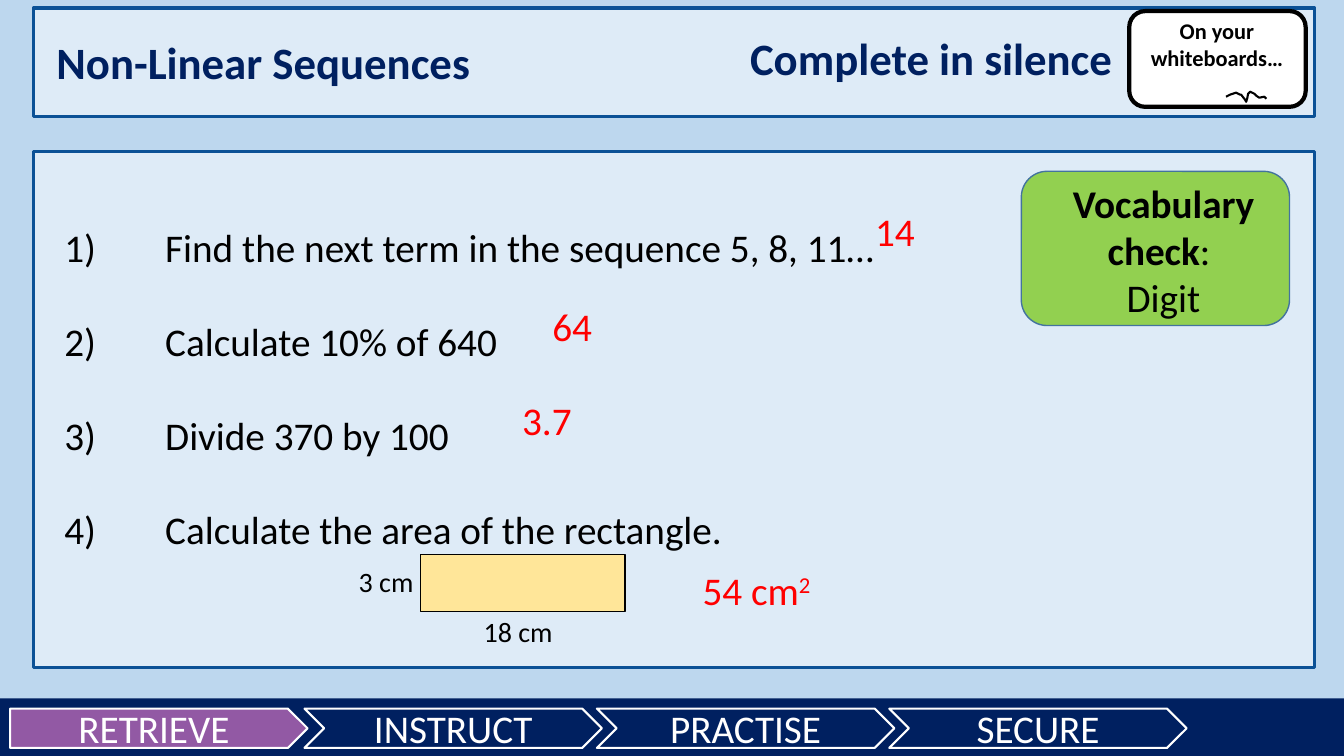
from pptx import Presentation
from pptx import util as u
from pptx.dml.color import RGBColor
from pptx.enum import shapes, text
from pptx.oxml import parse_xml
from pptx.oxml.ns import nsdecls

SKY = RGBColor(0xBD, 0xD7, 0xEE)
PALE = RGBColor(0xDE, 0xEB, 0xF7)
BLUE = RGBColor(0x0B, 0x51, 0x96)
NAVY = RGBColor(0x00, 0x20, 0x60)
PURPLE = RGBColor(0x92, 0x59, 0xA4)
GREEN = RGBColor(0x92, 0xD0, 0x50)
STEEL = RGBColor(0x43, 0x73, 0x9E)
YELLOW = RGBColor(0xFF, 0xE6, 0x99)
RED = RGBColor(0xFF, 0x00, 0x00)
BLACK = RGBColor(0x00, 0x00, 0x00)
WHITE = RGBColor(0xFF, 0xFF, 0xFF)

FONT = "Calibri"
LEFT, CENTER = text.PP_ALIGN.LEFT, text.PP_ALIGN.CENTER
KINDS = shapes.MSO_SHAPE

TITLE = "Non-Linear Sequences"
INSTRUCTION = "Complete in silence"
QUESTIONS = [
    "Find the next term in the sequence 5, 8, 11…",
    "Calculate 10% of 640",
    "Divide 370 by 100",
    "Calculate the area of the rectangle.",
]
# Each paragraph is a list of runs: (words, bold)
VOCABULARY = [[("Vocabulary check", True), (": ", False)], [("Digit", False)]]
STAGES = ["RETRIEVE", "INSTRUCT", "PRACTISE", "SECURE"]
STAGE_LEFT = [0.1, 3.02, 5.92, 8.82]
PANELS = [(0.33, 0.08, 12.71, 1.08), (0.33, 1.5, 12.71, 5.12)]
ANSWERS = [
    ("14", (8.58, 2.01, 0.88, 0.57)),
    ("64", (5.38, 2.95, 0.82, 0.57)),
    ("3.7", (5.08, 3.88, 0.91, 0.57)),
    ("54 cm", (6.87, 5.57, 2.59, 0.57)),
]
SIDE_LABELS = [
    ("3 cm", (3.46, 5.55, 0.83, 0.44), LEFT),
    ("18 cm", (4.62, 6.05, 1.04, 0.44), CENTER),
]
SCRIBBLE = [
    (12.16, 0.96), (12.2, 0.94), (12.23, 0.93), (12.26, 0.92), (12.3, 0.94),
    (12.31, 0.94), (12.35, 0.99), (12.36, 1.01), (12.37, 0.98), (12.38, 0.93),
    (12.4, 0.91), (12.44, 0.93), (12.46, 0.95), (12.49, 0.97), (12.54, 0.96),
    (12.56, 0.98),
]


def inches(values):
    return [u.Inches(value) for value in values]


def paint(shape, fill, line, width):
    shape.shadow.inherit = False
    if fill is None:
        shape.fill.background()
    else:
        shape.fill.solid()
        shape.fill.fore_color.rgb = fill
    if line is None:
        shape.line.fill.background()
    else:
        shape.line.color.rgb = line
        shape.line.width = u.Pt(width)


def add_box(parent, kind, place, fill, line=None, width=1):
    shape = parent.add_shape(kind, *inches(place))
    paint(shape, fill, line, width)
    return shape


def add_run(paragraph, words, size, color, bold=False):
    run = paragraph.add_run()
    run.text = words
    run.font.name = FONT
    run.font.size = u.Pt(size)
    run.font.bold = bold
    run.font.color.rgb = color
    return run


def add_text(parent, place, paragraphs, size, color, align=LEFT):
    """Add a wrapping text box; paragraphs are lists of (words, bold) runs."""
    frame = parent.add_textbox(*inches(place)).text_frame
    frame.word_wrap = True
    for index, runs in enumerate(paragraphs):
        paragraph = frame.add_paragraph() if index else frame.paragraphs[0]
        paragraph.alignment = align
        for words, bold in runs:
            add_run(paragraph, words, size, color, bold)
    return frame


def add_heading(slide):
    title = slide.shapes.title
    title.left, title.top, title.width, title.height = inches((0.46, 0.35, 9.95, 0.53))
    frame = title.text_frame
    frame.auto_size = text.MSO_AUTO_SIZE.NONE
    frame.vertical_anchor = text.MSO_ANCHOR.TOP
    paragraph = frame.paragraphs[0]
    paragraph.alignment = LEFT
    paragraph.line_spacing = 0.9
    add_run(paragraph, TITLE, 32, NAVY, True)
    frame = add_text(slide.shapes, (7.34, 0.32, 5.59, 0.53), [[(INSTRUCTION, True)]], 32, NAVY)
    frame.paragraphs[0].line_spacing = 0.9


def add_stages(parent):
    add_box(parent, KINDS.RECTANGLE, (0, 6.93, 13.33, 0.57), NAVY)
    for index, (stage, left) in enumerate(zip(STAGES, STAGE_LEFT)):
        kind = KINDS.CHEVRON if index else KINDS.PENTAGON
        fill = NAVY if index else PURPLE
        shape = add_box(parent, kind, (left, 7.03, 2.95, 0.39), fill, WHITE, 1.5)
        shape.text_frame.vertical_anchor = text.MSO_ANCHOR.MIDDLE
        paragraph = shape.text_frame.paragraphs[0]
        paragraph.alignment = CENTER
        add_run(paragraph, stage, 28, WHITE)


def add_questions(parent):
    lines = [[(f"{number})\t{question}", False)] for number, question in enumerate(QUESTIONS, 1)]
    frame = add_text(parent, (0.54, 1.7, 9.99, 3.87), lines, 28, BLACK)
    for paragraph in frame.paragraphs:
        paragraph.line_spacing = 2.0
        tabs = f'<a:tabLst {nsdecls("a")}><a:tab pos="{u.Inches(1)}" algn="l"/></a:tabLst>'
        paragraph._p.get_or_add_pPr().append(parse_xml(tabs))


def add_answers(parent):
    for answer, place in ANSWERS:
        frame = add_text(parent, place, [[(answer, False)]], 28, RED)
        if answer.endswith("cm"):
            square = add_run(frame.paragraphs[0], "2", 28, RED)
            square.font._element.set("baseline", "30000")


def add_whiteboard(parent):
    group = parent.add_group_shape().shapes
    add_box(group, KINDS.ROUNDED_RECTANGLE, (11.2, 0.11, 1.75, 0.95), WHITE, BLACK, 3)
    add_text(group, (11.25, 0.12, 1.64, 0.64), [[("On your whiteboards…", True)]], 16, BLACK, CENTER)
    points = [inches(point) for point in SCRIBBLE]
    builder = group.build_freeform(*points[0])
    builder.add_line_segments(points[1:], close=False)
    paint(builder.convert_to_shape(), None, BLACK, 1.5)


def main():
    presentation = Presentation()
    presentation.slide_width, presentation.slide_height = inches((13.33, 7.5))
    slide = presentation.slides.add_slide(presentation.slide_layouts[5])
    slide.background.fill.solid()
    slide.background.fill.fore_color.rgb = SKY
    parent = slide.shapes

    for place in PANELS:
        add_box(parent, KINDS.RECTANGLE, place, PALE, BLUE, 2.25)
    # The title goes above the panels
    parent._spTree.append(parent.title._element)
    add_stages(parent)
    add_heading(slide)
    add_box(parent, KINDS.ROUNDED_RECTANGLE, (10.13, 1.7, 2.66, 1.53), GREEN, STEEL)
    add_text(parent, (10.16, 1.73, 2.76, 1.51), VOCABULARY, 28, BLACK, CENTER)
    add_questions(parent)
    add_box(parent, KINDS.RECTANGLE, (4.17, 5.5, 2.03, 0.57), YELLOW, BLACK)
    for label, place, align in SIDE_LABELS:
        add_text(parent, place, [[(label, False)]], 20, BLACK, align)
    add_answers(parent)
    add_whiteboard(parent)
    presentation.save("out.pptx")


if __name__ == "__main__":
    main()
